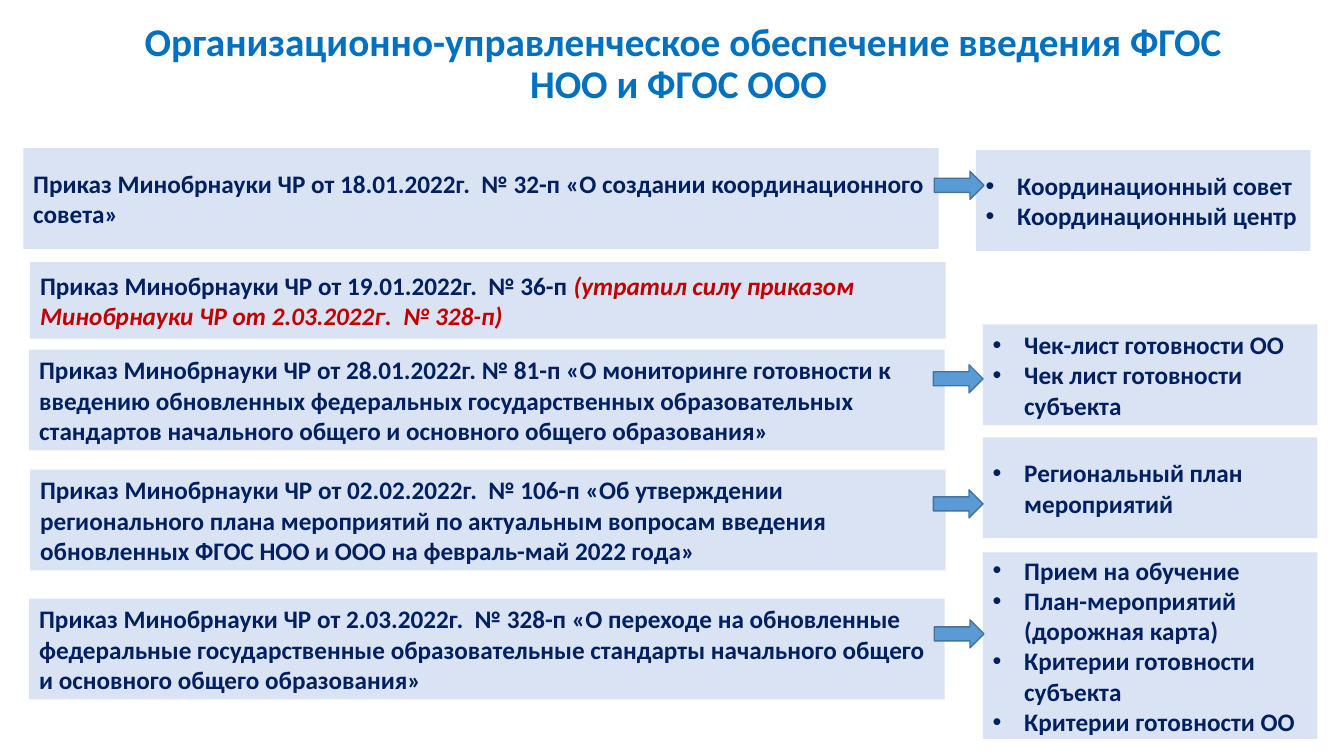
"""Build a slide linking ministry orders to the documents they introduce."""
from lxml.etree import SubElement
from pptx import Presentation
from pptx.dml.color import RGBColor
from pptx.enum.shapes import MSO_SHAPE
from pptx.enum.text import MSO_ANCHOR, MSO_AUTO_SIZE, PP_ALIGN
from pptx.oxml.ns import qn
from pptx.util import Pt

FONT = "Calibri"
NAVY, RED, BLUE, PALE = "002060", "C00000", "0070C0", "DAE3F3"
ARROW_FILL, ARROW_LINE = "5B9BD5", "43739E"
ORDER_WIDTH, RESULT_WIDTH = 653.8, 239
INDENT = 22.5

TITLE = " Организационно-управленческое обеспечение введения ФГОС НОО и ФГОС ООО"

ORDERS = [
    (16.6, 105.8, 72, "Приказ Минобрнауки ЧР от 18.01.2022г.  № 32-п «О создании "
     "координационного совета»", ""),
    (21.6, 187.2, 54.7, "Приказ Минобрнауки ЧР от 19.01.2022г.  № 36-п ",
     "(утратил силу приказом Минобрнауки ЧР от 2.03.2022г.  № 328-п)"),
    (20.9, 249.8, 72, "Приказ Минобрнауки ЧР от 28.01.2022г. № 81-п «О мониторинге "
     "готовности к введению обновленных федеральных государственных "
     "образовательных стандартов начального общего и основного общего образования»", ""),
    (21.6, 335.5, 72, "Приказ Минобрнауки ЧР от 02.02.2022г.  № 106-п «Об утверждении "
     "регионального плана мероприятий по актуальным вопросам введения "
     "обновленных ФГОС НОО и ООО на февраль-май 2022 года»", ""),
    (20.9, 427.7, 72, "Приказ Минобрнауки ЧР от 2.03.2022г.  № 328-п «О переходе на "
     "обновленные федеральные государственные образовательные стандарты "
     "начального общего и основного общего образования»", ""),
]

RESULTS = [
    (697, 107.3, 72, ["Координационный совет", "Координационный центр"]),
    (702, 231.8, 72, ["Чек-лист готовности ОО", "Чек лист готовности субъекта"]),
    (702, 312.5, 72, ["Региональный план мероприятий"]),
    (702, 394.6, 133.2, ["Прием на обучение", "План-мероприятий (дорожная карта)",
                         "Критерии готовности субъекта", "Критерии готовности ОО"]),
]

ARROWS = [(667.4, 122.4), (666.7, 260.6), (666.7, 349.9), (667.4, 442.8)]


def rgb(value):
    return RGBColor.from_string(value)


def format_run(r, size, color, italic=False):
    r.font.name = FONT
    r.font.size = Pt(size)
    r.font.bold = True
    r.font.italic = italic
    r.font.color.rgb = rgb(color)


def add_bullet(p):
    pPr = p._p.get_or_add_pPr()
    pPr.set("marL", str(Pt(INDENT)))
    pPr.set("indent", str(-Pt(INDENT)))
    SubElement(pPr, qn("a:buFont"), typeface="Arial")
    SubElement(pPr, qn("a:buChar"), char="•")


def add_title(slide, text):
    sp = slide.shapes.title
    sp.left, sp.top, sp.width, sp.height = Pt(70.6), Pt(22.3), Pt(828), Pt(47.5)
    tf = sp.text_frame
    tf.text = text
    tf.word_wrap = True
    tf.auto_size = MSO_AUTO_SIZE.NONE
    tf.vertical_anchor = MSO_ANCHOR.MIDDLE
    p = tf.paragraphs[0]
    p.alignment = PP_ALIGN.CENTER
    p.line_spacing = 0.9
    format_run(p.runs[0], 28, BLUE)


def add_block(slide, kind, left, top, width, height, fill):
    sp = slide.shapes.add_shape(kind, Pt(left), Pt(top), Pt(width), Pt(height))
    sp.shadow.inherit = False
    sp.fill.solid()
    sp.fill.fore_color.rgb = rgb(fill)
    sp.line.fill.background()
    return sp


def add_text_box(slide, left, top, width, height, lines):
    sp = add_block(slide, MSO_SHAPE.RECTANGLE, left, top, width, height, PALE)
    tf = sp.text_frame
    tf.word_wrap = True
    tf.vertical_anchor = MSO_ANCHOR.MIDDLE
    tf.text = "\n".join(lines)
    for p in tf.paragraphs:
        p.alignment = PP_ALIGN.LEFT
        format_run(p.runs[0], 18, NAVY)
    return tf


def add_order(slide, left, top, height, text, note):
    tf = add_text_box(slide, left, top, ORDER_WIDTH, height, [text])
    if note:
        r = tf.paragraphs[0].add_run()
        r.text = note
        format_run(r, 18, RED, italic=True)


def add_result(slide, left, top, height, items):
    tf = add_text_box(slide, left, top, RESULT_WIDTH, height, items)
    for p in tf.paragraphs:
        add_bullet(p)


def add_arrow(slide, left, top):
    sp = add_block(slide, MSO_SHAPE.RIGHT_ARROW, left, top, 35.5, 20, ARROW_FILL)
    sp.line.color.rgb = rgb(ARROW_LINE)
    sp.line.width = Pt(1)


def main():
    prs = Presentation()
    prs.slide_width, prs.slide_height = Pt(960), Pt(540)
    slide = prs.slides.add_slide(prs.slide_layouts[5])
    add_title(slide, TITLE)
    for order in ORDERS:
        add_order(slide, *order)
    for result in RESULTS:
        add_result(slide, *result)
    for arrow in ARROWS:
        add_arrow(slide, *arrow)
    prs.save("out.pptx")


if __name__ == "__main__":
    main()
